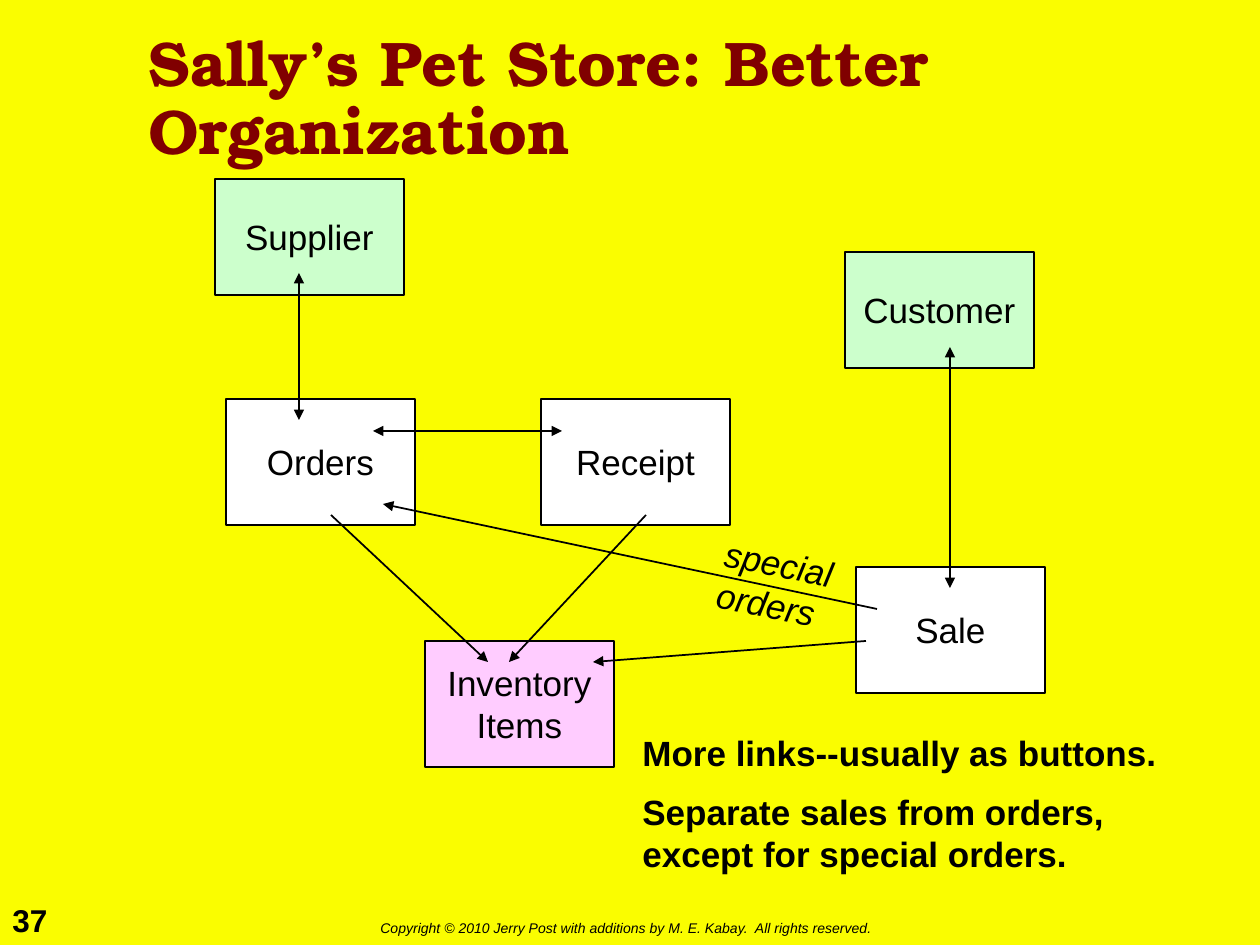
from pptx import Presentation
from pptx.dml.color import RGBColor
from pptx.enum.shapes import MSO_CONNECTOR, MSO_SHAPE
from pptx.enum.text import MSO_ANCHOR, MSO_AUTO_SIZE, PP_ALIGN
from pptx.oxml.ns import qn
from pptx.util import Pt
from lxml import etree

RECT = MSO_SHAPE.RECTANGLE
LINE = MSO_CONNECTOR.STRAIGHT
MIDDLE, TOP = MSO_ANCHOR.MIDDLE, MSO_ANCHOR.TOP
CENTER, LEFT = PP_ALIGN.CENTER, PP_ALIGN.LEFT
GROW = MSO_AUTO_SIZE.SHAPE_TO_FIT_TEXT

SCALE = 914400 / 126
BLACK, WHITE, GREEN, PINK = "000000", "FFFFFF", "CCFFCC", "FFCCFF"
YELLOW, MAROON = "FAFD00", "800000"


def px(*sizes):
    return [round(size * SCALE) for size in sizes]


def rgb(code):
    return RGBColor.from_string(code)


class Board:
    def __init__(self, slide):
        self.slide = slide
        self.font = "Arial"
        self.ink = BLACK
        self.size = 20
        fill = slide.background.fill
        fill.solid()
        fill.fore_color.rgb = rgb(YELLOW)

    def put(self, frame, lines, align=LEFT, size=None, font=None,
            color=None, bold=False, italic=False, gap=0, pitch=None):
        """Fill a text frame with one paragraph per line."""
        for i, line in enumerate(lines):
            para = frame.paragraphs[0] if i == 0 else frame.add_paragraph()
            para.alignment = align
            if i and gap:
                para.space_before = Pt(gap)
            if pitch:
                para.line_spacing = pitch
            run = para.add_run()
            run.text = line
            run.font.name = font or self.font
            run.font.size = Pt(size or self.size)
            run.font.bold = bold
            run.font.italic = italic
            run.font.color.rgb = rgb(color or self.ink)

    def text(self, area, lines, wrap=False, anchor=TOP, turn=0, grow=True,
             **style):
        box = self.slide.shapes.add_textbox(*px(*area))
        box.rotation = turn
        frame = box.text_frame
        frame.word_wrap = wrap
        frame.vertical_anchor = anchor
        if grow:
            frame.auto_size = GROW
        self.put(frame, lines, **style)

    def box(self, area, lines, fill):
        shape = self.slide.shapes.add_shape(RECT, *px(*area))
        shape.shadow.inherit = False
        shape.fill.solid()
        shape.fill.fore_color.rgb = rgb(fill)
        shape.line.color.rgb = rgb(self.ink)
        shape.line.width = Pt(1)
        frame = shape.text_frame
        frame.word_wrap = False
        frame.vertical_anchor = MIDDLE
        self.put(frame, lines, align=CENTER)

    def arrow(self, start, end, both=False):
        link = self.slide.shapes.add_connector(LINE, *px(*start, *end))
        link.line.color.rgb = rgb(self.ink)
        link.line.width = Pt(1)
        stroke = link.line._ln
        for tag in ("a:headEnd", "a:tailEnd") if both else ("a:tailEnd",):
            etree.SubElement(stroke, qn(tag)).set("type", "triangle")
        etree.SubElement(link._element.spPr, qn("a:effectLst"))


def main():
    deck = Presentation()
    deck.slide_width, deck.slide_height = px(1260, 945)
    board = Board(deck.slides.add_slide(deck.slide_layouts[6]))

    board.text((0, 895, 64, 50), ["37"], size=18, bold=True)
    board.text((368, 913, 532, 30),
               ["Copyright © 2010 Jerry Post with additions by M. E. Kabay."
                "  All rights reserved."], size=8, italic=True)
    board.text((136, 21, 987, 158), ["Sally’s Pet Store: Better Organization"],
               wrap=True, anchor=MIDDLE, grow=False, size=36, bold=True,
               font="TeX Gyre Bonum", color=MAROON, pitch=0.9)

    wide, tall, short = 189, 126, 116
    for left, top, high, fill, lines in (
        (226, 399, tall, WHITE, ["Orders"]),
        (541, 399, tall, WHITE, ["Receipt"]),
        (856, 567, tall, WHITE, ["Sale"]),
        (215, 179, short, GREEN, ["Supplier"]),
        (845, 252, short, GREEN, ["Customer"]),
        (425, 641, tall, PINK, ["Inventory", "Items"]),
    ):
        board.box((left, top, wide, high), lines, fill)

    for start, end, both in (
        ((562, 431), (373, 431), True),
        ((877, 609), (383, 504), False),
        ((299, 420), (299, 273), True),
        ((950, 588), (950, 347), True),
        ((331, 515), (488, 662), False),
        ((646, 515), (509, 662), False),
        ((866, 641), (593, 662), False),
    ):
        board.arrow(start, end, both)

    board.text((708, 536, 135, 97), ["special", "orders"], turn=11.2,
               italic=True)
    board.text((630, 725, 557, 160),
               ["More links--usually as buttons.",
                "Separate sales from orders, except for special orders."],
               wrap=True, bold=True, gap=10)
    deck.save("out.pptx")


if __name__ == "__main__":
    main()
